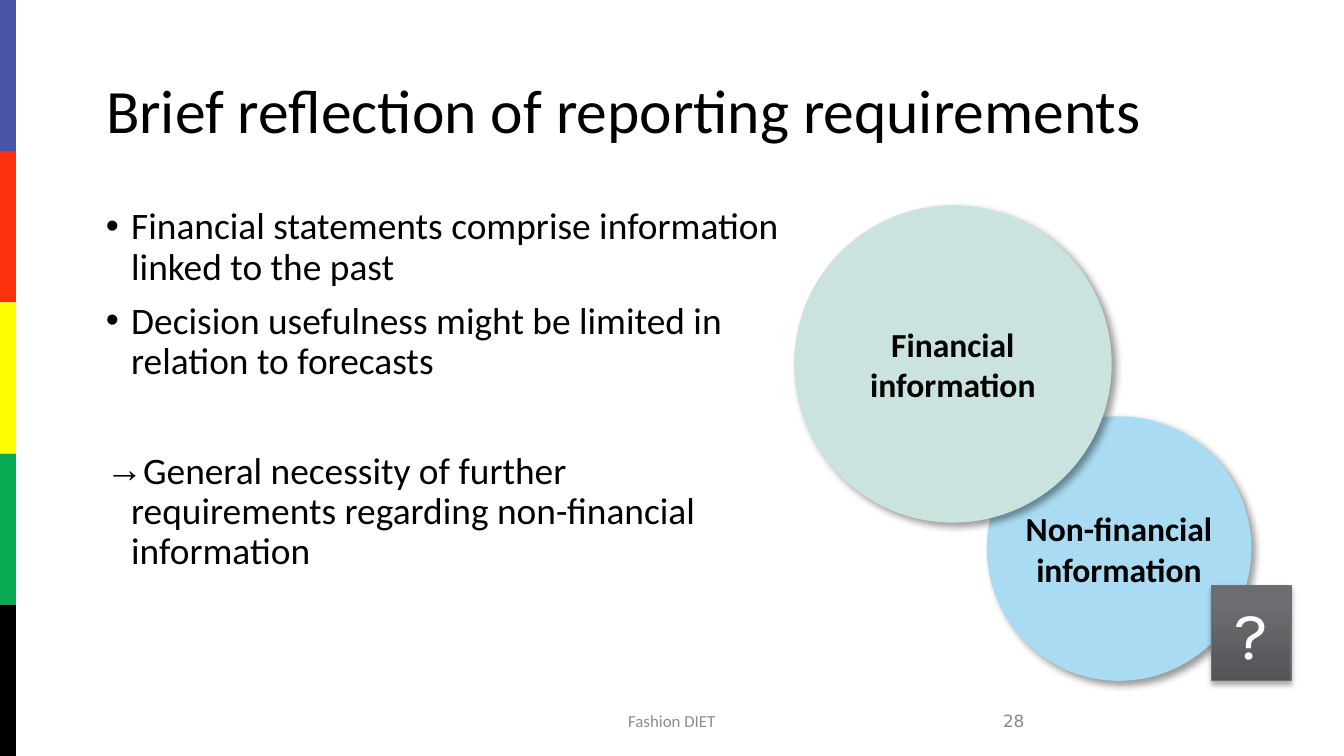
from dataclasses import dataclass

from lxml.etree import SubElement
from pptx import Presentation
from pptx.dml.color import RGBColor
from pptx.enum.shapes import MSO_SHAPE as Shape
from pptx.enum.text import MSO_ANCHOR as Anchor, MSO_AUTO_SIZE as AutoSize, PP_ALIGN as Align
from pptx.oxml.ns import qn
from pptx.util import Cm, Pt


@dataclass(frozen=True)
class Theme:
    stripes: tuple = ("4952A4", "FC300D", "FFFB00", "0BAA54", "000000")
    ink: str = "000000"
    white: str = "FFFFFF"
    footer: str = "8C8C8C"
    number: str = "898989"
    financial: str = "CAE3DE"
    non_financial: str = "A9DCF3"
    badge_dark: str = "535456"
    badge_light: str = "6C6D70"
    badge_line: str = "6D6E71"
    font: str = "Calibri"
    number_font: str = "DejaVu Sans"
    badge_font: str = "Karla"
    bullet_font: str = "Arial"
    title_size: int = 33
    body_size: int = 20
    circle_size: int = 18
    footer_size: int = 9
    badge_size: int = 36


THEME = Theme()


def rgb(code):
    return RGBColor.from_string(code)


def cm_box(*lengths):
    return tuple(Cm(length) for length in lengths)


def style(paragraph, size, color=THEME.ink, font=THEME.font, bold=False, align=Align.LEFT):
    paragraph.alignment = align
    paragraph.font.size = Pt(size)
    paragraph.font.name = font
    paragraph.font.bold = bold
    paragraph.font.color.rgb = rgb(color)


def add_plain_shape(slide, kind, box, color):
    shape = slide.shapes.add_shape(kind, *box)
    shape.shadow.inherit = False
    shape.fill.solid()
    shape.fill.fore_color.rgb = rgb(color)
    shape.line.fill.background()
    return shape


def add_shadow(shape, alpha, blur, distance, angle):
    """Cast a black outer shadow; alpha in percent, lengths in points."""
    effects = shape._element.spPr.find(qn("a:effectLst"))
    shadow = SubElement(effects, qn("a:outerShdw"), blurRad=str(Pt(blur)), dist=str(Pt(distance)),
                        dir=str(angle * 60000), algn="tl", rotWithShape="0")
    black = SubElement(shadow, qn("a:srgbClr"), val="000000")
    SubElement(black, qn("a:alpha"), val=str(alpha * 1000))


def add_bullet(paragraph, mark, indent):
    properties = paragraph._p.get_or_add_pPr()
    properties.set("marL", str(indent))
    properties.set("indent", str(-indent))
    SubElement(properties, qn("a:buFont"), typeface=THEME.bullet_font)
    SubElement(properties, qn("a:buChar"), char=mark)


def add_stripes(slide, box):
    left, top, width, height = box
    stripe_height = height / len(THEME.stripes)
    for row, color in enumerate(THEME.stripes):
        stripe_box = (left, top + round(row * stripe_height), width, round(stripe_height))
        add_plain_shape(slide, Shape.RECTANGLE, stripe_box, color)


def set_title(slide, box, text):
    title = slide.shapes.title
    title.left, title.top, title.width, title.height = box
    frame = title.text_frame
    frame.text = text
    frame.auto_size = AutoSize.NONE
    frame.vertical_anchor = Anchor.MIDDLE
    frame.paragraphs[0].line_spacing = 0.9
    style(frame.paragraphs[0], THEME.title_size)


def add_body(slide, box, points):
    """Add bulleted points, each given as (mark, space before, text)."""
    frame = slide.shapes.add_textbox(*box).text_frame
    frame.word_wrap = True
    for row, (mark, space_before, text) in enumerate(points):
        point = frame.add_paragraph() if row else frame.paragraphs[0]
        point.text = text
        add_bullet(point, mark, Cm(0.48))
        point.line_spacing = 0.9
        point.space_before = Pt(space_before)
        style(point, THEME.body_size)


def add_footer_text(slide, box, text, color, font, align):
    frame = slide.shapes.add_textbox(*box).text_frame
    frame.word_wrap = True
    frame.vertical_anchor = Anchor.MIDDLE
    frame.text = text
    style(frame.paragraphs[0], THEME.footer_size, color, font, align=align)


def add_circle(slide, box, text, color):
    circle = add_plain_shape(slide, Shape.OVAL, box, color)
    add_shadow(circle, alpha=40, blur=4, distance=3, angle=45)
    frame = circle.text_frame
    frame.margin_left = frame.margin_top = frame.margin_right = frame.margin_bottom = 0
    frame.word_wrap = True
    frame.vertical_anchor = Anchor.MIDDLE
    frame.text = text
    style(frame.paragraphs[0], THEME.circle_size, bold=True, align=Align.CENTER)


def add_badge(slide, box, text):
    badge = add_plain_shape(slide, Shape.RECTANGLE, box, THEME.badge_light)
    badge.fill.gradient()
    badge.fill.gradient_angle = 90
    stops = ((0, THEME.badge_dark), (0.8, THEME.badge_light))
    for stop, (position, color) in zip(badge.fill.gradient_stops, stops):
        stop.position = position
        stop.color.rgb = rgb(color)
    badge.line.color.rgb = rgb(THEME.badge_line)
    badge.line.width = Pt(0.75)
    add_shadow(badge, alpha=35, blur=3.1, distance=1.8, angle=90)
    frame = badge.text_frame
    frame.word_wrap = True
    frame.auto_size = AutoSize.SHAPE_TO_FIT_TEXT
    frame.vertical_anchor = Anchor.TOP
    frame.text = text
    style(frame.paragraphs[0], THEME.badge_size, THEME.white, THEME.badge_font, align=Align.CENTER)


def main():
    deck = Presentation()
    deck.slide_width, deck.slide_height = Cm(25.4), Cm(14.29)
    slide = deck.slides.add_slide(deck.slide_layouts.get_by_name("Title Only"))

    add_stripes(slide, (0, 0, Cm(0.3), deck.slide_height))
    set_title(slide, cm_box(1.75, 0.76, 21.9, 2.76), "Brief reflection of reporting requirements")
    add_body(slide, cm_box(1.75, 3.8, 13.25, 9.07), (
        ("•", 0, "Financial statements comprise information linked to the past"),
        ("•", 7.5, "Decision usefulness might be limited in relation to forecasts"),
        ("→", 37, "General necessity of further requirements regarding non-financial information"),
    ))
    add_footer_text(slide, cm_box(8.41, 13.24, 8.57, 0.76), "Fashion DIET",
                    THEME.footer, THEME.font, Align.CENTER)
    add_footer_text(slide, cm_box(13.9, 13.25, 5.71, 0.76), "28",
                    THEME.number, THEME.number_font, Align.RIGHT)
    add_circle(slide, cm_box(18.65, 7.87, 5, 5), "Non-financial information", THEME.non_financial)
    add_circle(slide, cm_box(15.01, 3.88, 6, 6), "Financial information", THEME.financial)
    add_badge(slide, cm_box(22.9, 11.07, 1.5, 1.8), "?")

    deck.save("out.pptx")


if __name__ == "__main__":
    main()
